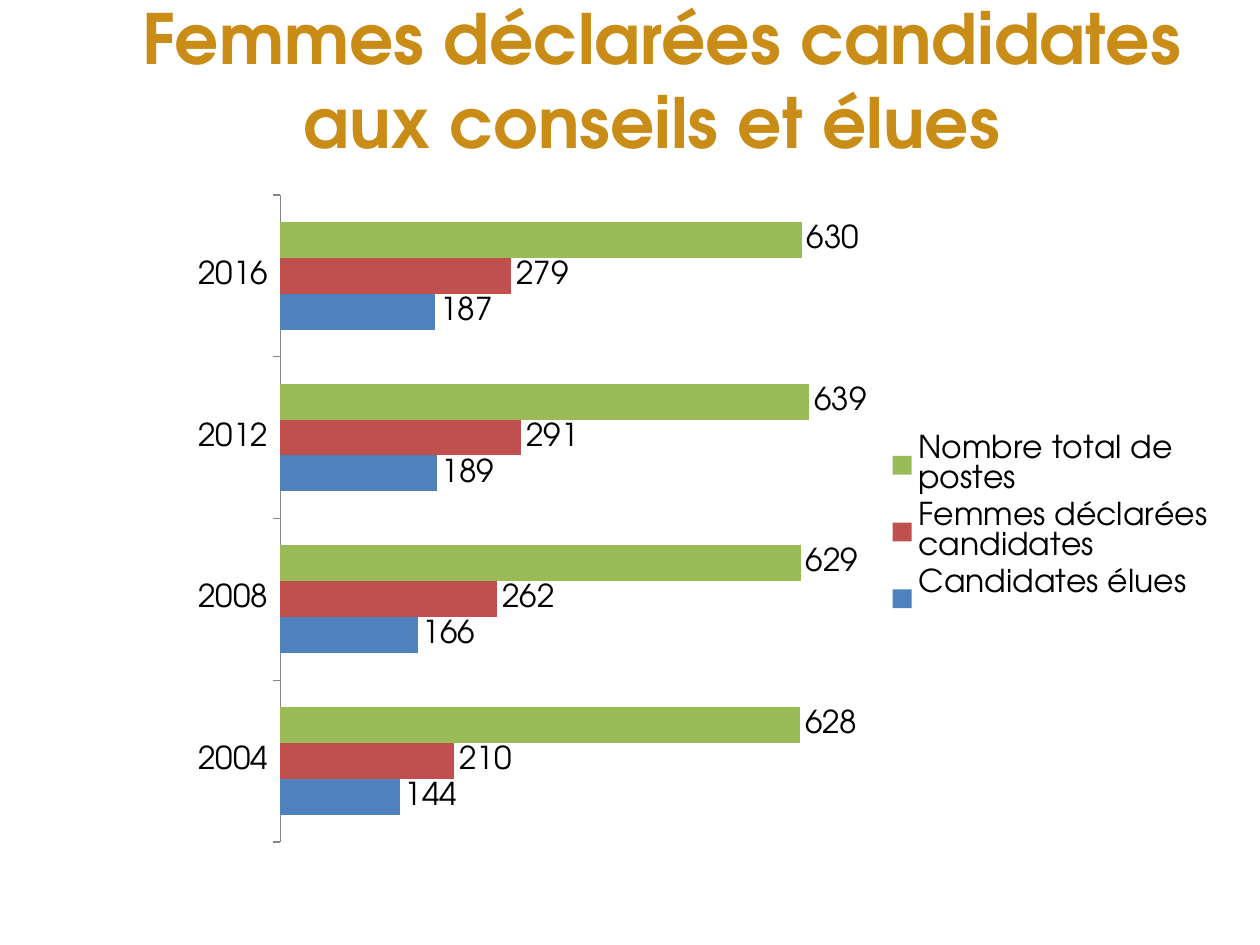
"""Build a slide charting women candidates and elected council members by year."""
from dataclasses import dataclass

import pptx
import pptx.chart.data
import pptx.dml.color
import pptx.enum.chart
import pptx.enum.text
import pptx.oxml
import pptx.oxml.ns
import pptx.util
from pptx.util import Inches

FONT = "TeX Gyre Adventor"
GOLD = pptx.dml.color.RGBColor(0xC9, 0x8C, 0x16)
BLUE = pptx.dml.color.RGBColor(0x4F, 0x81, 0xBD)
RED = pptx.dml.color.RGBColor(0xC0, 0x50, 0x4D)
GREEN = pptx.dml.color.RGBColor(0x9B, 0xBB, 0x59)
BLACK = pptx.dml.color.RGBColor(0, 0, 0)
GREY = pptx.dml.color.RGBColor(0x86, 0x86, 0x86)
YEARS = ("2004", "2008", "2012", "2016")


@dataclass(frozen=True)
class Measure:
    name: str
    counts: tuple[int, ...]
    color: pptx.dml.color.RGBColor


MEASURES = (
    Measure("Candidates élues", (144, 166, 189, 187), BLUE),
    Measure("Femmes déclarées candidates", (210, 262, 291, 279), RED),
    Measure("Nombre total de postes", (628, 629, 639, 630), GREEN),
)


def add_heading(slide: pptx.slide.Slide, wording: str) -> None:
    heading = slide.shapes.add_textbox(Inches(0.75), Inches(0), Inches(9), Inches(1.25))
    frame = heading.text_frame
    frame.word_wrap = True
    frame.vertical_anchor = pptx.enum.text.MSO_ANCHOR.MIDDLE
    line = frame.paragraphs[0]
    line.alignment = pptx.enum.text.PP_ALIGN.CENTER
    wording_run = line.add_run()
    wording_run.text = wording
    wording_run.font.name = FONT
    wording_run.font.size = pptx.util.Pt(39.6)
    wording_run.font.bold = True
    wording_run.font.color.rgb = GOLD


def place_plot(chart: pptx.chart.chart.Chart, x: float, y: float, w: float, h: float) -> None:
    plot_area = chart._chartSpace.chart.plotArea
    for old_layout in plot_area.findall(pptx.oxml.ns.qn("c:layout")):
        plot_area.remove(old_layout)
    fractions = "".join(
        f'<c:{key} val="{value}"/>' for key, value in zip("xywh", (x, y, w, h))
    )
    fractions = fractions.replace("c:w ", "c:w ").replace("c:h ", "c:h ")
    plot_area.insert(0, pptx.oxml.parse_xml(
        f'<c:layout {pptx.oxml.ns.nsdecls("c")}><c:manualLayout>'
        '<c:layoutTarget val="inner"/><c:xMode val="edge"/><c:yMode val="edge"/>'
        f"{fractions}</c:manualLayout></c:layout>"
    ))


def add_results(slide: pptx.slide.Slide, measures: tuple[Measure, ...]) -> None:
    results = pptx.chart.data.CategoryChartData()
    results.categories = YEARS
    for measure in measures:
        results.add_series(measure.name, measure.counts)
    chart = slide.shapes.add_chart(
        pptx.enum.chart.XL_CHART_TYPE.BAR_CLUSTERED,
        Inches(1.39), Inches(1.44), Inches(8.36), Inches(5.35), results,
    ).chart
    chart.has_title = False
    chart.font.name = FONT
    chart.font.size = pptx.util.Pt(18)
    chart.font.color.rgb = BLACK
    chart.has_legend = True
    chart.legend.position = pptx.enum.chart.XL_LEGEND_POSITION.RIGHT
    chart.legend.include_in_layout = False

    year_axis = chart.category_axis
    year_axis.major_tick_mark = pptx.enum.chart.XL_TICK_MARK.OUTSIDE
    year_axis.format.line.color.rgb = GREY
    count_axis = chart.value_axis
    count_axis.minimum_scale = 0
    count_axis.maximum_scale = 700
    count_axis.has_major_gridlines = False
    count_axis.visible = False

    bars = chart.plots[0]
    bars.gap_width = 150
    bars.vary_by_categories = False
    for series, measure in zip(bars.series, measures):
        series.format.fill.solid()
        series.format.fill.fore_color.rgb = measure.color
        series.data_labels.show_value = True
        series.data_labels.position = pptx.enum.chart.XL_LABEL_POSITION.OUTSIDE_END
    place_plot(chart, 0.1, 0.02, 0.55, 0.96)


def main() -> None:
    deck = pptx.Presentation()
    deck.slide_width = Inches(10)
    deck.slide_height = Inches(7.5)
    slide = deck.slides.add_slide(deck.slide_layouts[6])
    add_heading(slide, "Femmes déclarées candidates aux conseils et élues ")
    add_results(slide, MEASURES)
    deck.save("out.pptx")


if __name__ == "__main__":
    main()
